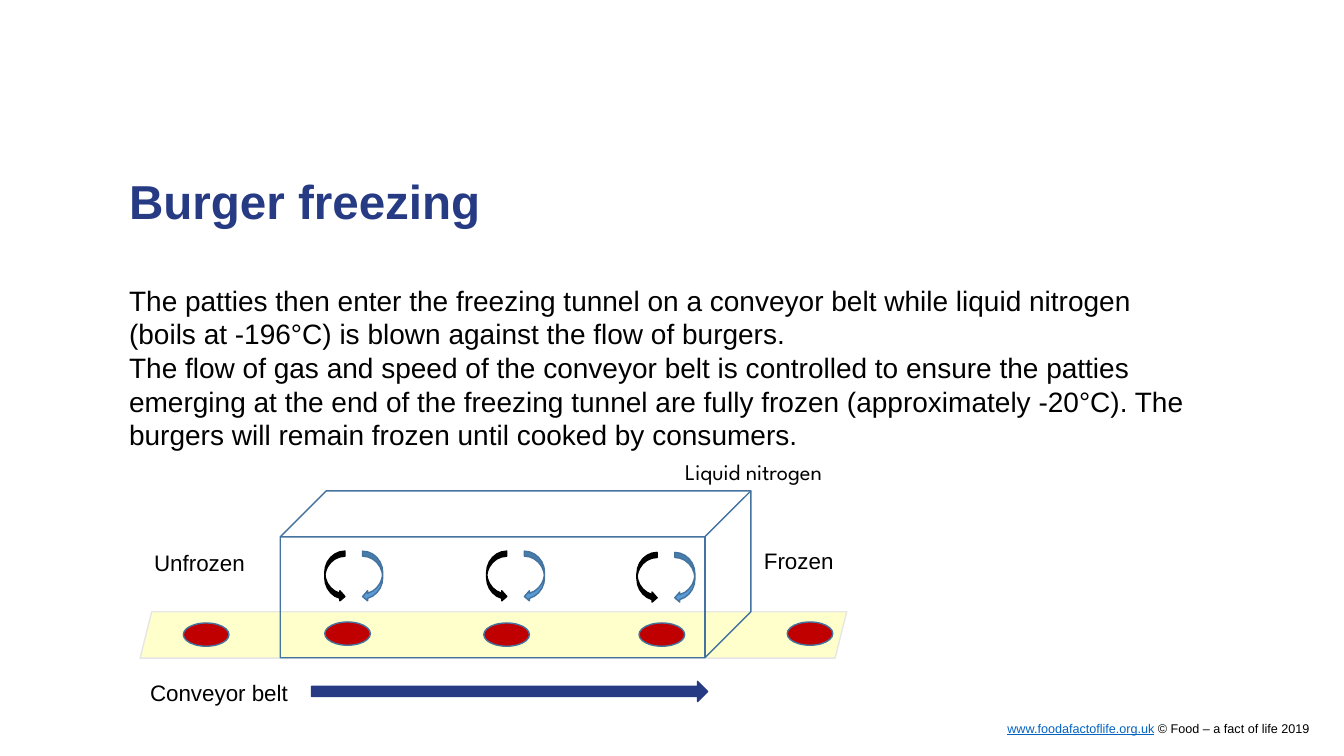
from pptx import Presentation
from pptx.dml.color import RGBColor
from pptx.enum import shapes, text
from pptx.util import Pt

NAVY = "263B83"
STEEL = "43739E"
BLACK = "000000"
RED = "C00000"
KIND = shapes.MSO_SHAPE

BODY = (
    "The patties then enter the freezing tunnel on a conveyor belt while liquid nitrogen "
    "(boils at -196°C) is blown against the flow of burgers.",
    "The flow of gas and speed of the conveyor belt is controlled to ensure the patties "
    "emerging at the end of the freezing tunnel are fully frozen (approximately -20°C). "
    "The burgers will remain frozen until cooked by consumers.",
)
PATTIES = ((131, 445), (232, 444.3), (345.6, 445), (456.5, 445), (562.3, 444.3))
SWIRLS = ((232, 393.7), (347.6, 393.7), (455, 394.6))


def paint(color_format, hex_color):
    color_format.rgb = RGBColor.from_string(hex_color)


def place(shape, left, top, width, height):
    shape.left, shape.top = Pt(left), Pt(top)
    shape.width, shape.height = Pt(width), Pt(height)


def add_run(paragraph, words, size, color=BLACK, font="Arial", bold=False, underline=False):
    run = paragraph.add_run()
    run.text = words
    run.font.name = font
    run.font.size = Pt(size)
    run.font.bold = bold
    run.font.underline = underline
    paint(run.font.color, color)


def clear_insets(frame):
    frame.margin_left = frame.margin_top = frame.margin_right = frame.margin_bottom = 0
    frame.word_wrap = True
    frame.vertical_anchor = text.MSO_ANCHOR.TOP


def add_box(slide, left, top, width, height):
    box = slide.shapes.add_textbox(Pt(left), Pt(top), Pt(width), Pt(height))
    return box.text_frame


def add_label(slide, words, left, top, width, font="Arial"):
    frame = add_box(slide, left, top, width, 26.6)
    frame.word_wrap = False
    add_run(frame.paragraphs[0], words, 16, font=font)


def add_part(slide, kind, left, top, width, height, fill, line=STEEL):
    part = slide.shapes.add_shape(kind, Pt(left), Pt(top), Pt(width), Pt(height))
    part.shadow.inherit = False
    if fill:
        part.fill.solid()
        paint(part.fill.fore_color, fill)
    else:
        part.fill.background()
    paint(part.line.color, line)
    part.line.width = Pt(1)
    return part


def add_title(slide):
    title = slide.shapes.title
    place(title, 92.2, 123.1, 765.4, 56.9)
    clear_insets(title.text_frame)
    heading = title.text_frame.paragraphs[0]
    heading.alignment = text.PP_ALIGN.LEFT
    heading.line_spacing = 1.0
    add_run(heading, "Burger freezing", 34, NAVY, bold=True)


def add_body(slide):
    frame = add_box(slide, 92.2, 202.3, 765.4, 283.7)
    clear_insets(frame)
    for index, words in enumerate(BODY):
        paragraph = frame.add_paragraph() if index else frame.paragraphs[0]
        paragraph.line_spacing = Pt(24)
        add_run(paragraph, words, 20)


def add_footer(slide):
    frame = add_box(slide, 90.7, 514.8, 844.6, 10.8)
    clear_insets(frame)
    credit = frame.paragraphs[0]
    credit.alignment = text.PP_ALIGN.RIGHT
    add_run(credit, "www.foodafactoflife.org.uk", 9, "0563C1", underline=True)
    add_run(credit, " © Food – a fact of life 2019", 9)


def add_tunnel(slide):
    add_part(slide, KIND.PARALLELOGRAM, 100.1, 437, 504.7, 33.1, "FFFFCC", "E7E6E6")
    tunnel = add_part(slide, KIND.CUBE, 200.2, 350.6, 336.2, 119.2, None)
    tunnel.adjustments[0] = 0.276
    for left, top in PATTIES:
        add_part(slide, KIND.OVAL, left, top, 32.6, 16.6, RED)
    for left, top in SWIRLS:
        add_part(slide, KIND.CURVED_RIGHT_ARROW, left, top, 14.4, 36, BLACK, BLACK)
        add_part(slide, KIND.CURVED_LEFT_ARROW, left + 27, top, 14.4, 36, "5B9BD5")
    add_part(slide, KIND.RIGHT_ARROW, 222.5, 486.7, 283, 14.4, NAVY, NAVY)


def main():
    deck = Presentation()
    deck.slide_width, deck.slide_height = Pt(960), Pt(540)
    slide = deck.slides.add_slide(deck.slide_layouts.get_by_name("Title Only"))
    add_footer(slide)
    add_title(slide)
    add_body(slide)
    add_tunnel(slide)
    add_label(slide, "Conveyor belt", 100.1, 481.7, 114.5)
    add_label(slide, "Unfrozen", 103, 388.8, 79.9)
    add_label(slide, "Frozen", 538.6, 387.4, 64.8)
    add_label(slide, "Liquid nitrogen", 482.4, 324, 120.2, "League Spartan")
    deck.save("out.pptx")


if __name__ == "__main__":
    main()
